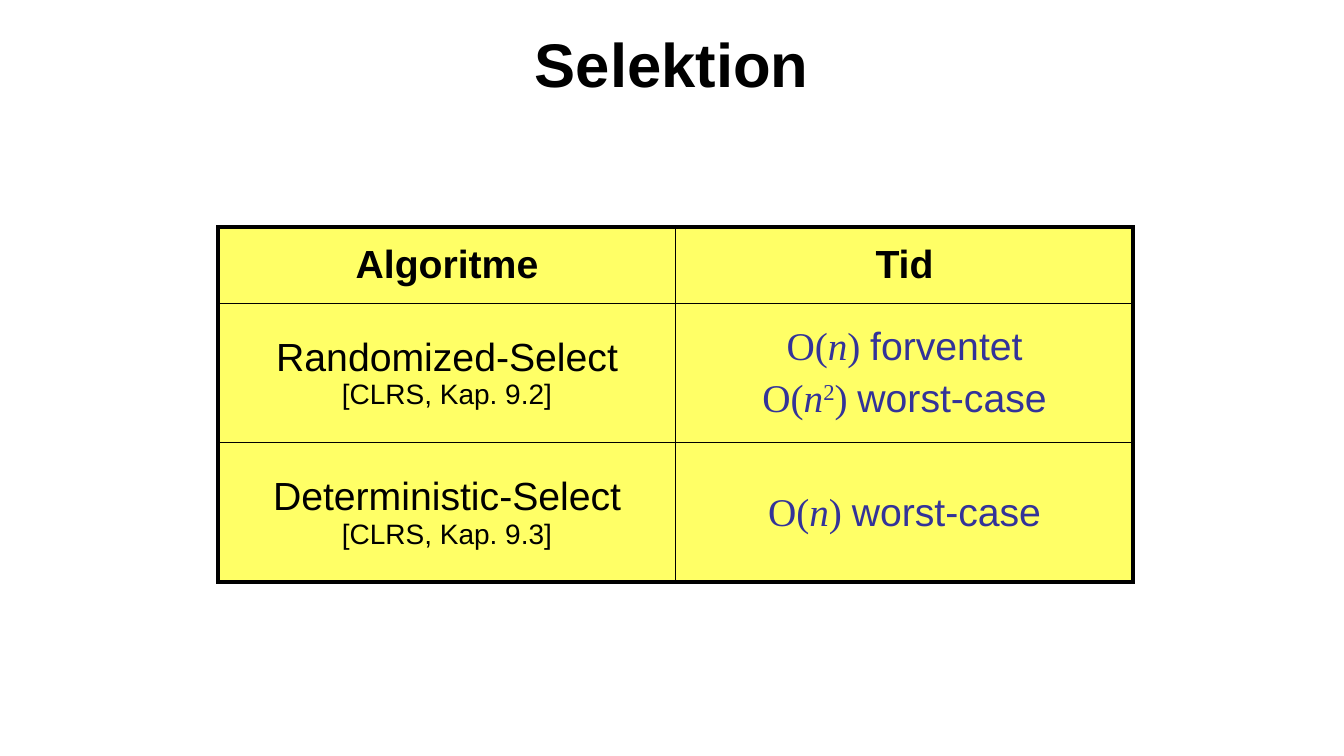
from pptx import Presentation
from pptx.dml.color import RGBColor
from pptx.enum.text import MSO_ANCHOR, PP_ALIGN
from pptx.oxml import parse_xml
from pptx.oxml.ns import nsdecls
from pptx.util import Cm, Pt

CENTER = PP_ALIGN.CENTER
MIDDLE = MSO_ANCHOR.MIDDLE

BLACK = RGBColor(0x00, 0x00, 0x00)
BLUE = RGBColor(0x33, 0x33, 0x99)
YELLOW = RGBColor(0xFF, 0xFF, 0x66)

TITLE_ONLY = 5
THICK, THIN = 3, 1


class SlideBuilder:
    sans = "Arial"
    serif = "Times New Roman"
    body_size = 28
    note_size = 20
    space_before = Pt(5.6)

    def __init__(self, presentation):
        self.slide = presentation.slides.add_slide(presentation.slide_layouts[TITLE_ONLY])

    def run(self, paragraph, text, size=body_size, font=sans, color=BLACK,
            bold=False, italic=False, superscript=False):
        run = paragraph.add_run()
        run.text = text
        run.font.size = Pt(size)
        run.font.name = font
        run.font.color.rgb = color
        run.font.bold = bold
        run.font.italic = italic
        if superscript:
            run._r.get_or_add_rPr().set("baseline", "30000")

    def title(self, text, left, top, width, height):
        shape = self.slide.shapes.title
        shape.left, shape.top, shape.width, shape.height = left, top, width, height
        shape.text_frame.vertical_anchor = MIDDLE
        paragraph = shape.text_frame.paragraphs[0]
        paragraph.alignment = CENTER
        self.run(paragraph, text, size=44, bold=True)

    def table(self, left, top, column_widths, row_heights):
        table = self.slide.shapes.add_table(
            len(row_heights), len(column_widths), left, top,
            sum(column_widths), sum(row_heights)).table
        table.first_row = table.horz_banding = False
        for column, width in zip(table.columns, column_widths):
            column.width = width
        for row, height in zip(table.rows, row_heights):
            row.height = height
        last_row, last_column = len(row_heights) - 1, len(column_widths) - 1
        for r in range(last_row + 1):
            for c in range(last_column + 1):
                cell = table.cell(r, c)
                cell.fill.solid()
                cell.fill.fore_color.rgb = YELLOW
                cell.vertical_anchor = MIDDLE
                self.borders(cell, L=c == 0, R=c == last_column, T=r == 0, B=r == last_row)
        return table

    def borders(self, cell, **outer_sides):
        properties = cell._tc.get_or_add_tcPr()
        for index, (side, outer) in enumerate(outer_sides.items()):
            width = Pt(THICK if outer else THIN)
            properties.insert(index, parse_xml(
                f'<a:ln{side} {nsdecls("a")} w="{width}"><a:solidFill>'
                f'<a:srgbClr val="{BLACK}"/></a:solidFill></a:ln{side}>'))

    def paragraphs(self, cell, count, space_before):
        frame = cell.text_frame
        for _ in range(count - 1):
            frame.add_paragraph()
        for paragraph in frame.paragraphs:
            paragraph.alignment = CENTER
            paragraph.space_before = space_before
        return frame.paragraphs

    def heading(self, cell, text):
        paragraph, = self.paragraphs(cell, 1, self.space_before)
        self.run(paragraph, text, bold=True)

    def algorithm(self, cell, name, reference):
        name_line, reference_line = self.paragraphs(cell, 2, Pt(0))
        self.run(name_line, name)
        self.run(reference_line, reference, size=self.note_size)

    def running_times(self, cell, times):
        lines = self.paragraphs(cell, len(times), self.space_before)
        for paragraph, (exponent, case) in zip(lines, times):
            math_style = {"font": self.serif, "color": BLUE}
            self.run(paragraph, "O(", **math_style)
            self.run(paragraph, "n", italic=True, **math_style)
            if exponent:
                self.run(paragraph, exponent, superscript=True, **math_style)
            self.run(paragraph, ") ", **math_style)
            self.run(paragraph, case, color=BLUE)


def main():
    presentation = Presentation()
    presentation.slide_width, presentation.slide_height = Cm(33.87), Cm(19.05)
    builder = SlideBuilder(presentation)

    # Title
    builder.title("Selektion", Cm(5.5), Cm(0), Cm(22.86), Cm(3.18))

    # Table with its heading row
    table = builder.table(Cm(5.5), Cm(5.72), [Cm(11.53)] * 2,
                          [Cm(1.93), Cm(3.51), Cm(3.51)])
    for column, text in enumerate(["Algoritme", "Tid"]):
        builder.heading(table.cell(0, column), text)

    # Algorithms, each with (exponent, case) running times
    algorithms = [
        ("Randomized-Select", "[CLRS, Kap. 9.2]", [("", "forventet"), ("2", "worst-case")]),
        ("Deterministic-Select", "[CLRS, Kap. 9.3]", [("", "worst-case")]),
    ]
    for row, (name, reference, times) in enumerate(algorithms, start=1):
        builder.algorithm(table.cell(row, 0), name, reference)
        builder.running_times(table.cell(row, 1), times)

    presentation.save("out.pptx")


if __name__ == "__main__":
    main()
